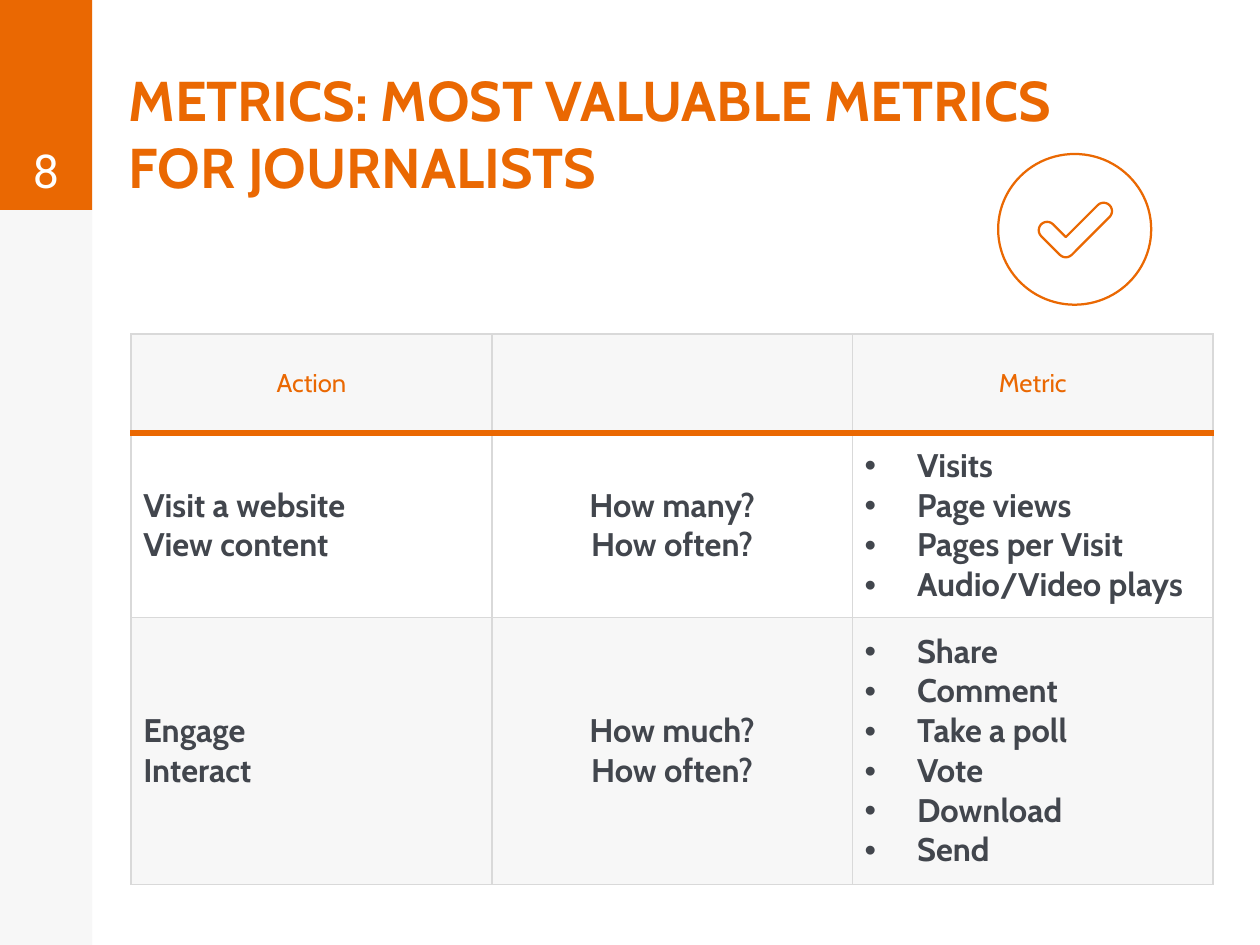
from math import cos, radians, sin, sqrt

from lxml.etree import SubElement
from pptx import Presentation
from pptx.dml.color import RGBColor
from pptx.enum.shapes import MSO_SHAPE
from pptx.enum.text import MSO_ANCHOR, PP_ALIGN
from pptx.oxml.ns import qn
from pptx.util import Pt

ORANGE, PALE, WHITE, SLATE, RULE = "EA6802", "F7F7F7", "FFFFFF", "42464D", "D9D9D9"

TITLE = "METRICS: MOST VALUABLE METRICS FOR JOURNALISTS"
PAGE = "8"
HEADINGS = [["Action"], [], ["Metric"]]
ROWS = [
    (["Visit a website", "View content"], ["How many?", "How often?"],
     ["Visits", "Page views", "Pages per Visit", "Audio/Video plays"]),
    (["Engage", "Interact"], ["How much?", "How often?"],
     ["Share", "Comment", "Take a poll", "Vote", "Download", "Send"]),
]
ROW_HEIGHTS = [42.5, 79, 114.5]
ROW_FILLS = [PALE, WHITE, PALE]
COLUMN_WIDTH = 154.6
TABLE_LEFT, TABLE_TOP = 56.2, 143.1
SIDEBAR_WIDTH, TAB_HEIGHT = 39.5, 90
SLIDE_WIDTH, SLIDE_HEIGHT = 540, 405
BULLET_INDENT = 22.5
BADGE = (427.8, 66, 65.6, 64.6)
TICK_VERTEX, TICK_RADIUS = (456.8, 106.7), 3.6
TICK_SHORT_ARM, TICK_LONG_ARM = 8, 16.2


def rgb(color):
    return RGBColor.from_string(color)


def write(frame, lines, size, color, font="Cabin", bold=False,
          align=PP_ALIGN.LEFT, bulleted=False):
    for index, line in enumerate(lines):
        paragraph = frame.paragraphs[0] if index == 0 else frame.add_paragraph()
        paragraph.alignment = align
        if bulleted:
            properties = paragraph._p.get_or_add_pPr()
            properties.set("marL", str(Pt(BULLET_INDENT)))
            properties.set("indent", str(-Pt(BULLET_INDENT)))
            SubElement(properties, qn("a:buFont"), typeface="Arial")
            SubElement(properties, qn("a:buChar"), char="•")
        run = paragraph.add_run()
        run.text = line
        run.font.size, run.font.name, run.font.bold = Pt(size), font, bold
        run.font.color.rgb = rgb(color)


def add_text_box(slide, box, text, **style):
    frame = slide.shapes.add_textbox(*map(Pt, box)).text_frame
    frame.word_wrap = True
    frame.vertical_anchor = MSO_ANCHOR.BOTTOM
    frame.margin_left = frame.margin_right = Pt(5.2)
    frame.margin_top = frame.margin_bottom = Pt(5.2)
    write(frame, [text], **style)


def paint(shape, fill=None, line=None):
    shape.shadow.inherit = False
    if fill:
        shape.fill.solid()
        shape.fill.fore_color.rgb = rgb(fill)
    else:
        shape.fill.background()
    if line:
        shape.line.color.rgb = rgb(line)
        shape.line.width = Pt(0.96)
    else:
        shape.line.fill.background()


def set_border(cell, side, color, width):
    line = SubElement(cell._tc.get_or_add_tcPr(), qn(f"a:ln{side}"), w=str(Pt(width)))
    SubElement(SubElement(line, qn("a:solidFill")), qn("a:srgbClr"), val=color)


def add_metrics_table(slide):
    columns = len(HEADINGS)
    table = slide.shapes.add_table(
        len(ROW_HEIGHTS), columns, Pt(TABLE_LEFT), Pt(TABLE_TOP),
        Pt(COLUMN_WIDTH * columns), Pt(sum(ROW_HEIGHTS))).table
    table.first_row = table.horz_banding = False
    for column in table.columns:
        column.width = Pt(COLUMN_WIDTH)
    for r, contents in enumerate([HEADINGS, *ROWS]):
        table.rows[r].height = Pt(ROW_HEIGHTS[r])
        for c, lines in enumerate(contents):
            cell = table.cell(r, c)
            cell.vertical_anchor = MSO_ANCHOR.MIDDLE
            cell.margin_left = cell.margin_right = Pt(5.2)
            cell.margin_top = cell.margin_bottom = Pt(4.3)
            for side in "LRTB":
                under_header = (r, side) in ((0, "B"), (1, "T"))
                set_border(cell, side, *((ORANGE, 3) if under_header else (RULE, 0.75)))
            cell.fill.solid()
            cell.fill.fore_color.rgb = rgb(ROW_FILLS[r])
            if r == 0:
                write(cell.text_frame, lines, 11, ORANGE, align=PP_ALIGN.CENTER)
            else:
                write(cell.text_frame, lines, 14, SLATE, bold=True,
                      align=PP_ALIGN.CENTER if c == 1 else PP_ALIGN.LEFT,
                      bulleted=c == 2)


def arc(center, start, sweep):
    """Points on a rounded end of the tick, clockwise, angles in degrees."""
    angles = [radians(start + step) for step in range(0, sweep + 1, 15)]
    return [(center[0] + TICK_RADIUS * cos(a), center[1] + TICK_RADIUS * sin(a))
            for a in angles]


def add_tick_badge(slide):
    paint(slide.shapes.add_shape(MSO_SHAPE.OVAL, *map(Pt, BADGE)), line=ORANGE)
    x, y = TICK_VERTEX
    outline = [
        *arc((x - TICK_SHORT_ARM, y - TICK_SHORT_ARM), 135, 180),
        (x, y - TICK_RADIUS * sqrt(2)),
        *arc((x + TICK_LONG_ARM, y - TICK_LONG_ARM), 225, 180),
        *arc(TICK_VERTEX, 45, 90),
    ]
    points = [(Pt(px), Pt(py)) for px, py in outline]
    builder = slide.shapes.build_freeform(*points[0])
    builder.add_line_segments(points[1:], close=True)
    paint(builder.convert_to_shape(), line=ORANGE)


def main():
    deck = Presentation()
    deck.slide_width, deck.slide_height = Pt(SLIDE_WIDTH), Pt(SLIDE_HEIGHT)
    slide = deck.slides.add_slide(deck.slide_layouts[6])
    for height, color in ((SLIDE_HEIGHT, PALE), (TAB_HEIGHT, ORANGE)):
        paint(slide.shapes.add_shape(MSO_SHAPE.RECTANGLE, 0, 0, Pt(SIDEBAR_WIDTH),
                                     Pt(height)), fill=color)
    add_text_box(slide, (50, 0.8, 410.4, 90), TITLE, size=24, color=ORANGE, bold=True)
    add_text_box(slide, (0, 0, SIDEBAR_WIDTH, TAB_HEIGHT), PAGE, size=20,
                 color=WHITE, font="Roboto", align=PP_ALIGN.CENTER)
    add_metrics_table(slide)
    add_tick_badge(slide)
    deck.save("out.pptx")


if __name__ == "__main__":
    main()
